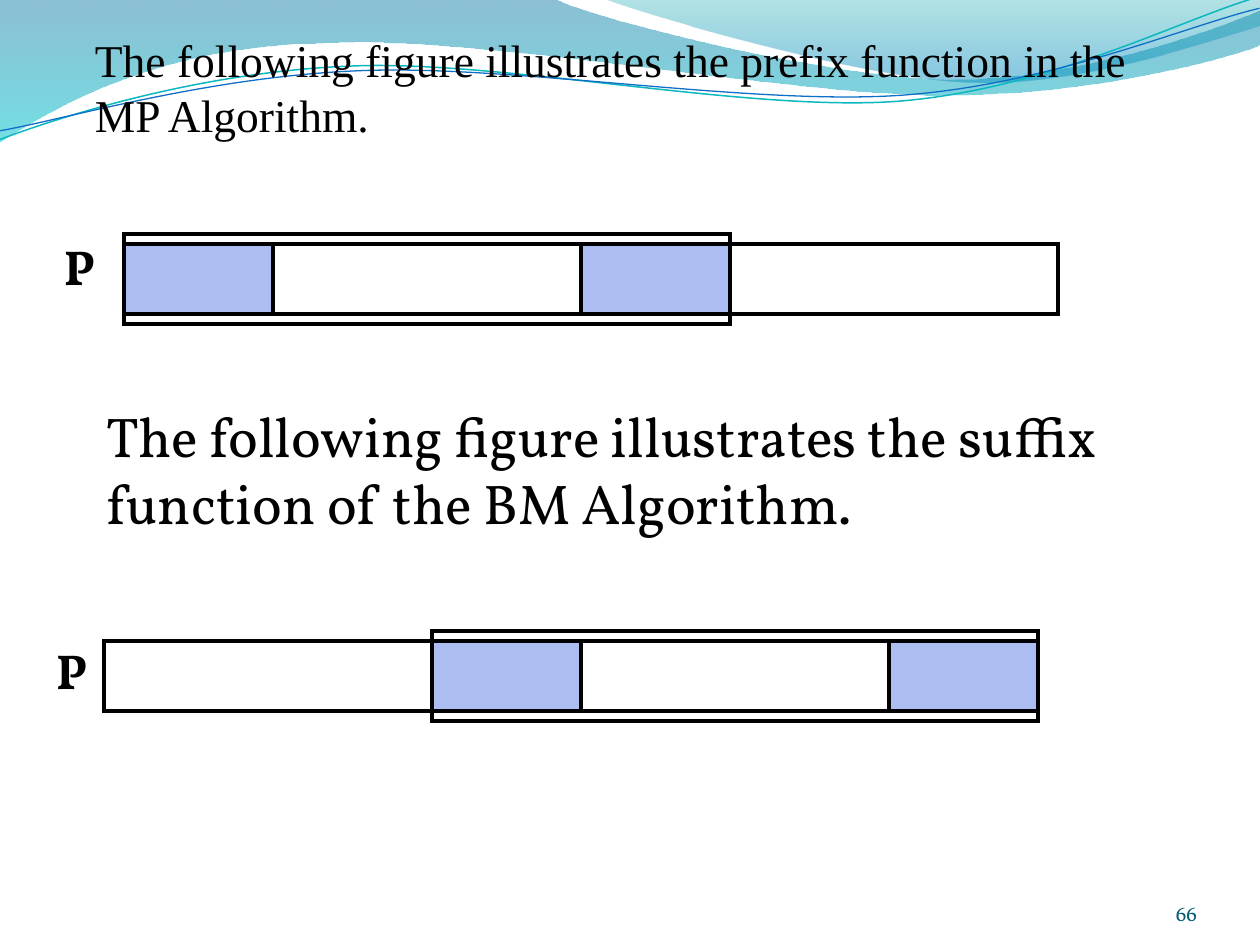
from dataclasses import dataclass
from math import cos, radians, sin

from lxml import etree
from pptx import Presentation
from pptx.dml.color import RGBColor
from pptx.enum.shapes import MSO_SHAPE
from pptx.enum.text import MSO_ANCHOR, PP_ALIGN
from pptx.oxml.ns import qn
from pptx.util import Pt

RECT = MSO_SHAPE.RECTANGLE
TOP, BOTTOM = MSO_ANCHOR.TOP, MSO_ANCHOR.BOTTOM
LEFT, RIGHT = PP_ALIGN.LEFT, PP_ALIGN.RIGHT
SCALE = 914400 / 126
INSETS = (13, 6, 13, 6)
TILT = 2.7

BAR_W, BAR_H = 934, 70
WINDOW_W, WINDOW_RISE = 606, 10
BLOCK_W = 149

BROAD_WAVE = ((0, 0), [
    (554, -1),
    (600, 21, 837, 79, 955, 79), (1075, 79, 1207, 33, 1260, 11),
    (1261, 45),
    (1239, 55, 1096, 96, 940, 95), (784, 95, 481, 35, 324, 43),
    (163, 45, 58, 105, -1, 142), (0, 0)])
RIGHT_WAVE = ((604, -1), [
    (641, 14, 859, 78, 969, 82), (1079, 87, 1211, 40, 1260, 26),
    (1260, 0), (604, -1)])
TEAL_CURVE = ((0, 140), [
    (60, 117, 199, 72, 349, 66), (498, 59, 747, 112, 898, 101),
    (1050, 89, 1182, 19, 1257, -3)])
BLUE_CURVE = ((0, 131), [
    (59, 121, 207, 77, 357, 71), (508, 64, 752, 106, 903, 95),
    (1053, 84, 1186, 26, 1260, 8)])


@dataclass(frozen=True)
class Theme:
    """Colours, fonts and type sizes of the slide."""
    ink: str = "000000"
    block: str = "ACBDF2"
    number: str = "045D75"
    teal: str = "0AB8BF"
    blue: str = "0F6FC6"
    broad_stops: tuple = ((0, "0074A1", 45), (100, "00C6CF", 55))
    right_stops: tuple = ((0, "00A1A9", 30), (80, "008BBF", 45))
    serif: str = "Times New Roman"
    body: str = "Vollkorn"
    prefix_size: int = 26
    suffix_size: int = 32
    label_size: int = 28
    number_size: int = 12
    outline: float = 2.25


THEME = Theme()


def px(n):
    """Turn pixels into EMU."""
    return round(n * SCALE)


def rgb(value):
    """Turn a hex string into a colour."""
    return RGBColor.from_string(value)


def turn(point, center, degrees):
    """Turn a point clockwise about a center."""
    dx, dy = point[0] - center[0], point[1] - center[1]
    c, s = cos(radians(degrees)), sin(radians(degrees))
    return center[0] + dx * c - dy * s, center[1] + dx * s + dy * c


def add_path(s, path, close, center=(0, 0), tilt=0):
    """Add a freeform of straight and cubic segments."""
    start, segments = path
    points = [start] + [seg[i:i + 2] for seg in segments for i in range(0, len(seg), 2)]
    points = [turn(point, center, tilt) for point in points]
    builder = s.shapes.build_freeform(*points[0], scale=SCALE)
    builder.add_line_segments(points[1:], close=close)
    sp = builder.convert_to_shape()
    steps = iter(list(sp.element.iter(qn("a:lnTo"))))
    for seg in segments:
        step = next(steps)
        if len(seg) == 6:
            cubic = etree.Element(qn("a:cubicBezTo"))
            step.addprevious(cubic)
            for part in (step, next(steps), next(steps)):
                cubic.append(part[0])
                part.getparent().remove(part)
    sp.rotation = -tilt
    sp.shadow.inherit = False
    return sp


def add_wave(s, path, stops):
    """Add a closed wave with a translucent downward gradient."""
    sp = add_path(s, path, True)
    sp.line.fill.background()
    sp.fill.gradient()
    sp.fill.gradient_angle = 270
    for stop, (position, color, alpha) in zip(sp.fill.gradient_stops, stops):
        stop.position = position / 100
        stop.color.rgb = rgb(color)
    for node, (position, color, alpha) in zip(sp.element.iter(qn("a:srgbClr")), stops):
        etree.SubElement(node, qn("a:alpha")).set("val", str(alpha * 1000))


def add_curve(s, path, center, color, width):
    """Add an open thin tilted curve."""
    sp = add_path(s, path, False, center, TILT)
    sp.fill.background()
    sp.line.color.rgb = rgb(color)
    sp.line.width = Pt(width)


def add_rect(s, x, y, w, h, fill=None):
    """Add a sharp outlined rectangle, filled on request."""
    sp = s.shapes.add_shape(RECT, px(x), px(y), px(w), px(h))
    sp.shadow.inherit = False
    if fill:
        sp.fill.solid()
        sp.fill.fore_color.rgb = rgb(fill)
    else:
        sp.fill.background()
    sp.line.color.rgb = rgb(THEME.ink)
    sp.line.width = Pt(THEME.outline)
    ln = sp.element.find(".//" + qn("a:ln"))
    etree.SubElement(ln, qn("a:miter")).set("lim", "800000")


def add_text(s, box, text, size, font=THEME.body, color=THEME.ink, bold=False,
             align=LEFT, anchor=TOP, insets=INSETS, wrap=True):
    """Add a text box with one run."""
    tf = s.shapes.add_textbox(*map(px, box)).text_frame
    tf.word_wrap = wrap
    tf.vertical_anchor = anchor
    tf.margin_left, tf.margin_top, tf.margin_right, tf.margin_bottom = map(px, insets)
    p = tf.paragraphs[0]
    p.alignment = align
    r = p.add_run()
    r.text = text
    r.font.name = font
    r.font.size = Pt(size)
    r.font.bold = bold
    r.font.color.rgb = rgb(color)


def add_pattern(s, x, y, window_x):
    """Add a pattern bar with a window whose two ends match."""
    add_rect(s, x, y, BAR_W, BAR_H)
    add_rect(s, window_x, y - WINDOW_RISE, WINDOW_W, BAR_H + 2 * WINDOW_RISE)
    for block_x in (window_x, window_x + WINDOW_W - BLOCK_W):
        add_rect(s, block_x, y, BLOCK_W, BAR_H, THEME.block)


def add_label(s, x, y):
    """Add the name of a pattern bar."""
    add_text(s, (x, y, 55, 72), "P", THEME.label_size, bold=True, wrap=False)


def main():
    """Build the slide and save it."""
    prs = Presentation()
    prs.slide_width, prs.slide_height = px(1260), px(945)
    s = prs.slides.add_slide(prs.slide_layouts[6])
    add_wave(s, BROAD_WAVE, THEME.broad_stops)
    add_wave(s, RIGHT_WAVE, THEME.right_stops)
    add_curve(s, TEAL_CURVE, (629, 72), THEME.teal, 0.85)
    add_curve(s, BLUE_CURVE, (629, 74), THEME.blue, 0.75)
    add_text(s, (44, 26, 1134, 208),
             "The following figure illustrates the prefix function in the MP Algorithm.",
             THEME.prefix_size, font=THEME.serif, insets=(51, 6, 13, 6))
    add_text(s, (1092, 876, 105, 50), "66", THEME.number_size, color=THEME.number,
             align=RIGHT, anchor=BOTTOM, insets=(0, 0, 0, 0))
    add_pattern(s, 124, 244, 124)
    add_text(s, (94, 395, 1070, 147),
             "The following figure illustrates the suffix function of the BM Algorithm.",
             THEME.suffix_size)
    add_pattern(s, 104, 641, 104 + BAR_W - WINDOW_W)
    add_label(s, 51, 230)
    add_label(s, 43, 634)
    prs.save("out.pptx")


if __name__ == "__main__":
    main()
